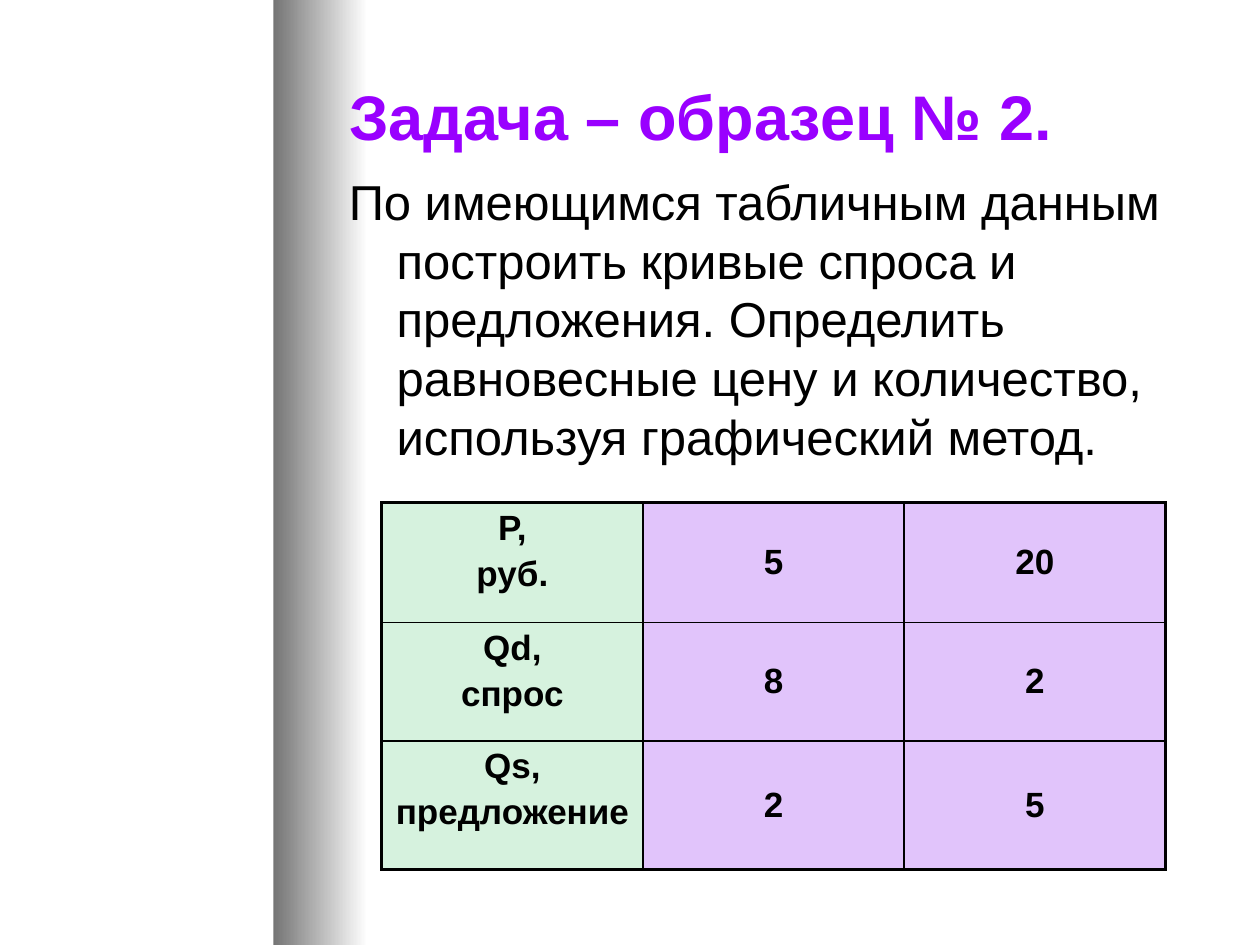
from lxml import etree
from pptx import Presentation
from pptx import util as u
from pptx.dml import color
from pptx.enum import shapes, text
from pptx.oxml import ns

FONT = "Arial"
INK = "000000"


def rgb(code):
    return color.RGBColor.from_string(code)


class Deck:
    def __init__(self):
        self.prs = Presentation()
        self.prs.slide_width = u.Inches(10)
        self.prs.slide_height = u.Inches(7.5)
        self.slide = self.prs.slides.add_slide(self.prs.slide_layouts[5])

    def place(self, shape, box):
        shape.left, shape.top, shape.width, shape.height = map(u.Inches, box)

    def style(self, par, size, ink=INK, bold=False, align=text.PP_ALIGN.LEFT):
        par.alignment = align
        font = par.font
        font.name, font.size, font.bold = FONT, u.Pt(size), bold
        font.color.rgb = rgb(ink)

    def band(self, box, start, end):
        shape = self.slide.shapes.add_shape(
            shapes.MSO_SHAPE.RECTANGLE, *map(u.Inches, box))
        shape.shadow.inherit = False
        shape.line.fill.background()
        shape.fill.gradient()
        shape.fill.gradient_angle = 0
        for stop, code, pos in zip(shape.fill.gradient_stops, (start, end), (0, 1)):
            stop.color.rgb = rgb(code)
            stop.position = pos
        self.slide.shapes._spTree.insert(2, shape._element)

    def title(self, box, words, ink):
        shape = self.slide.shapes.title
        self.place(shape, box)
        frame = shape.text_frame
        frame.text = words
        frame.auto_size = text.MSO_AUTO_SIZE.NONE
        frame.vertical_anchor = text.MSO_ANCHOR.MIDDLE
        self.style(frame.paragraphs[0], 36, ink, True)

    def body(self, box, words, hang):
        frame = self.slide.shapes.add_textbox(*map(u.Inches, box)).text_frame
        frame.word_wrap = True
        frame.text = words
        par = frame.paragraphs[0]
        props = par._p.get_or_add_pPr()
        props.set("marL", str(u.Inches(hang)))
        props.set("indent", str(-u.Inches(hang)))
        self.style(par, 28)

    def edge(self, cell, index, side, width):
        line = etree.Element(ns.qn("a:ln" + side), w=str(u.Pt(width)))
        fill = etree.SubElement(line, ns.qn("a:solidFill"))
        etree.SubElement(fill, ns.qn("a:srgbClr"), val=INK)
        cell._tc.get_or_add_tcPr().insert(index, line)

    def cell(self, cell, words, fill, anchor):
        cell.fill.solid()
        cell.fill.fore_color.rgb = rgb(fill)
        tint = cell._tc.tcPr.find(".//" + ns.qn("a:srgbClr"))
        etree.SubElement(tint, ns.qn("a:alpha"), val="50000")
        cell.vertical_anchor = anchor
        cell.text = words
        for num, par in enumerate(cell.text_frame.paragraphs):
            self.style(par, 20, bold=True, align=text.PP_ALIGN.CENTER)
            if num:
                par.space_before = u.Pt(4)

    def table(self, box, rows, highs):
        last, end = len(rows) - 1, len(rows[0]) - 1
        table = self.slide.shapes.add_table(
            last + 1, end + 1, *map(u.Inches, box)).table
        table.first_row = table.horz_banding = False
        for r, (row, high) in enumerate(zip(rows, highs)):
            table.rows[r].height = u.Inches(high)
            for c, words in enumerate(row):
                cell = table.cell(r, c)
                if c:
                    self.cell(cell, words, "C58BF9", text.MSO_ANCHOR.MIDDLE)
                else:
                    self.cell(cell, words, "AEE6BF", text.MSO_ANCHOR.TOP)
                outer = (c == 0, c == end, r == 0, r == last)
                for i, (side, thick) in enumerate(zip("LRTB", outer)):
                    self.edge(cell, i, side, 2.25 if thick else 1)


def main():
    deck = Deck()
    deck.band((2.17, 0, 0.75, 7.5), "757575", "FFFFFF")
    deck.title((2.67, 0.25, 7, 1.33), "Задача – образец № 2.", "9900FF")
    deck.body(
        (2.67, 1.31, 7, 2.82),
        "По имеющимся табличным данным построить кривые спроса и предложения. "
        "Определить равновесные цену и количество, используя графический метод.",
        0.38)
    deck.table(
        (3.03, 3.99, 6.22, 2.91),
        [("Р,\nруб.", "5", "20"),
         ("Qd,\nспрос", "8", "2"),
         ("Qs,\nпредложение", "2", "5")],
        (0.95, 0.94, 1.02))
    deck.prs.save("out.pptx")


if __name__ == "__main__":
    main()
